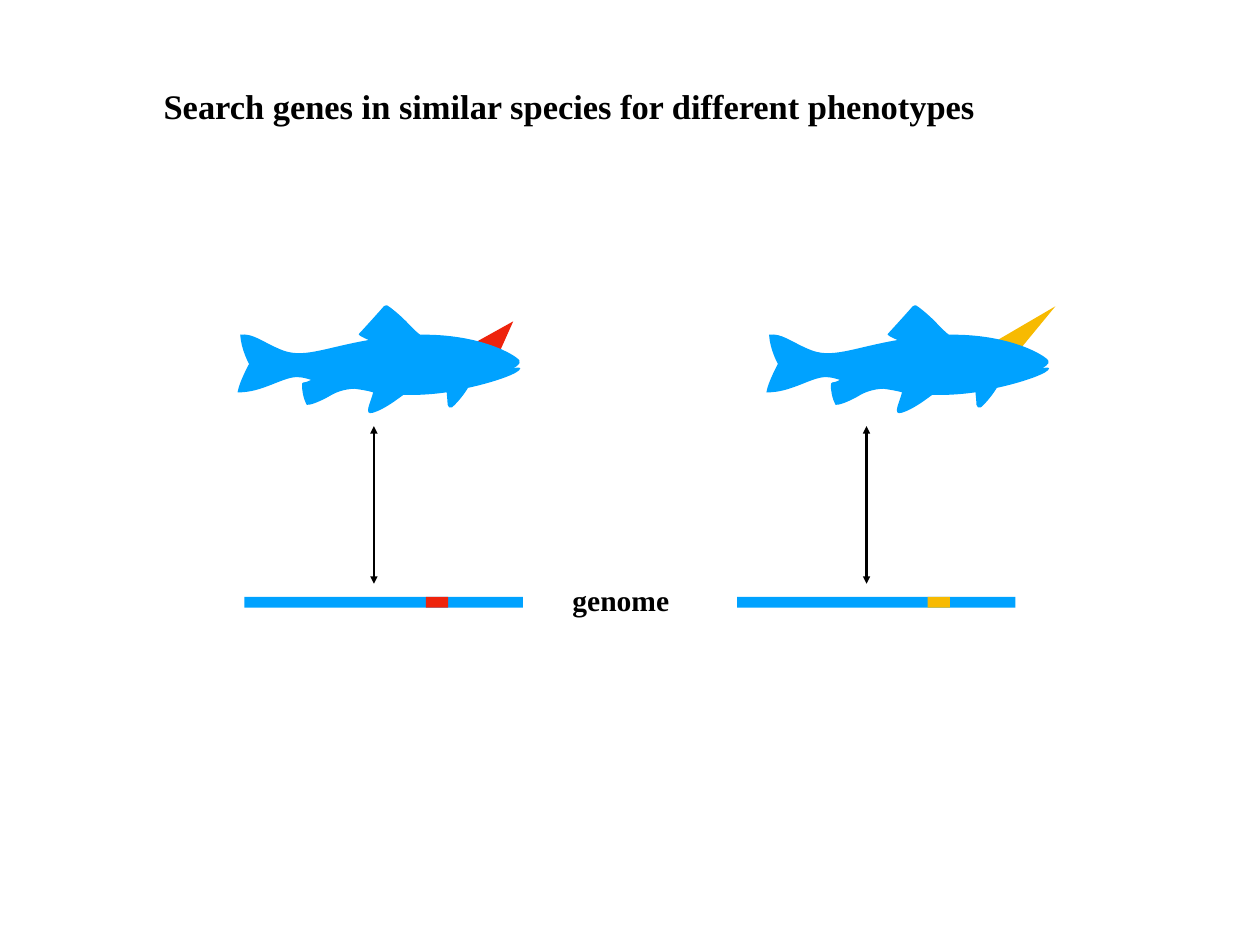
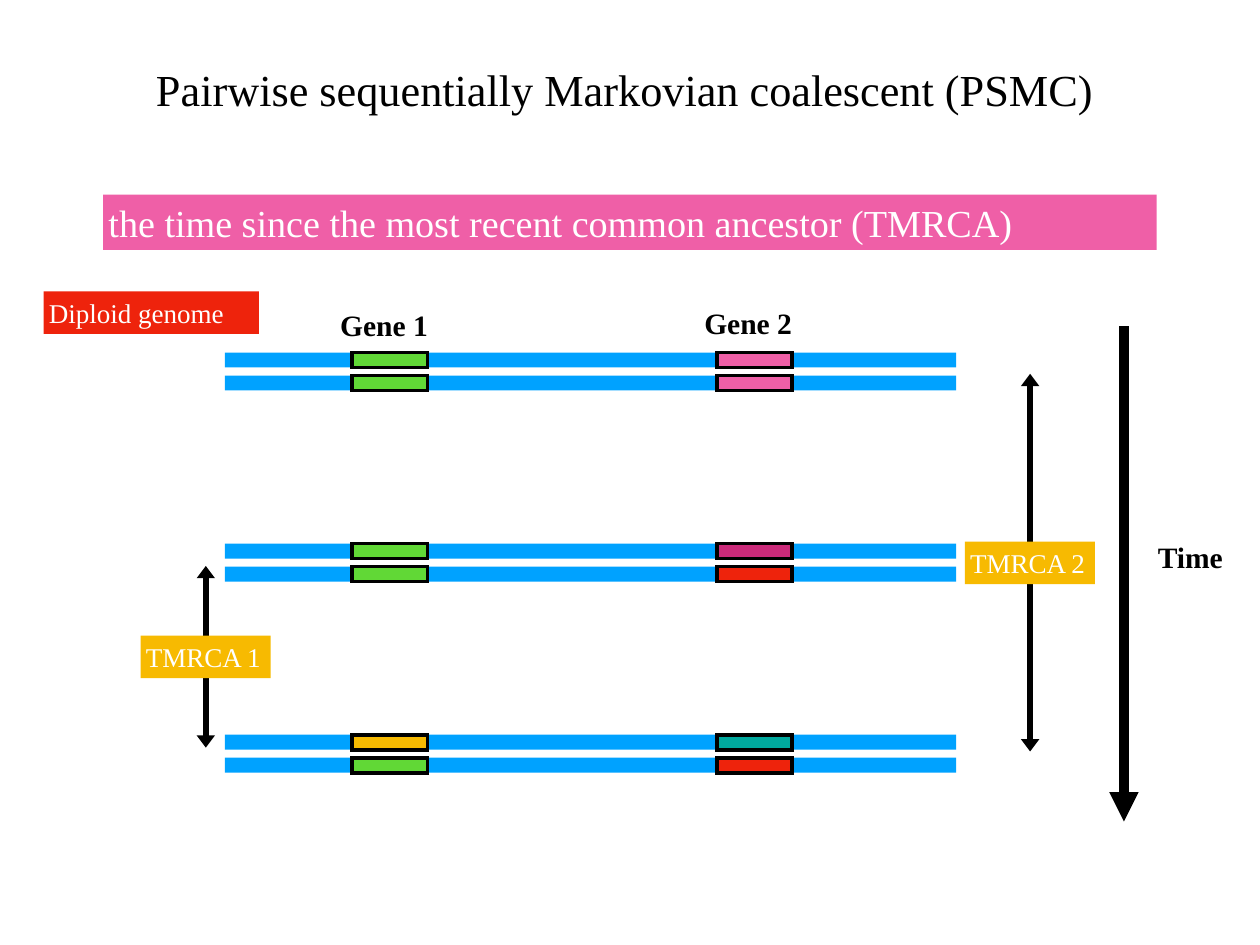
import pptx
import pptx.util
import pptx.dml.color
import pptx.enum.shapes
import pptx.enum.text
import pptx.oxml
import pptx.oxml.ns

Cm = pptx.util.Cm
Pt = pptx.util.Pt
ALIGN = pptx.enum.text.PP_ALIGN
NS = pptx.oxml.ns.nsdecls("a")
FONT = "Times New Roman"
COLORS = {
    "black": "000000", "white": "FFFFFF", "blue": "00A2FF", "red": "EE230C",
    "yellow": "F7BA01", "green": "61D836", "pink": "EF5FA7",
    "magenta": "CB2A7A", "teal": "00A89D",
}

# Fish on a 318 x 122 grid: a start point, then Bézier segments
# (control 1, control 2, end).
FISH_GRID = (318, 122)
FISH_START = (167, 0)
FISH_CURVES = [
    (166, 0, 165, 0, 165, 1), (159, 8, 139, 30, 137, 32),
    (135, 33, 141, 36, 148, 39), (96, 48, 73, 61, 47, 49),
    (28, 41, 17, 31, 3, 33), (4, 50, 13, 66, 13, 66),
    (13, 66, 2, 86, 0, 98), (28, 99, 53, 79, 69, 81),
    (72, 81, 77, 82, 83, 84), (79, 86, 76, 87, 74, 87),
    (73, 87, 73, 88, 73, 88), (72, 96, 75, 106, 77, 110),
    (77, 112, 79, 113, 80, 112), (84, 112, 96, 107, 106, 101),
    (118, 94, 132, 94, 132, 94), (139, 95, 146, 96, 153, 98),
    (151, 108, 141, 125, 153, 121), (166, 117, 180, 106, 187, 101),
    (190, 101, 193, 101, 196, 101), (208, 101, 222, 100, 236, 98),
    (236, 101, 237, 107, 237, 112), (237, 115, 240, 116, 242, 115),
    (250, 108, 257, 98, 260, 93), (292, 86, 319, 76, 319, 71),
    (319, 69, 311, 71, 311, 71), (311, 71, 321, 66, 318, 62),
    (314, 56, 274, 32, 206, 33), (203, 31, 199, 27, 194, 22),
    (187, 14, 174, 3, 169, 0), (169, 0, 168, -1, 167, 0),
]
SHORT_HORN = [(311, 18), (290, 65), (266, 43)]
LONG_HORN = [(326, 1), (261, 39), (275, 63)]


def rgb(name):
    return pptx.dml.color.RGBColor.from_string(COLORS[name])


def paint(shape, fill, outline=None):
    shape.shadow.inherit = False
    shape.fill.solid()
    shape.fill.fore_color.rgb = rgb(fill)
    if outline:
        shape.line.color.rgb = rgb("black")
        shape.line.width = Pt(outline)
        shape.line._get_or_add_ln().append(
            pptx.oxml.parse_xml(f'<a:miter {NS} lim="400000"/>'))
    else:
        shape.line.fill.background()


def write(shape, text, size, color="black", bold=False, align=ALIGN.LEFT):
    tf = shape.text_frame
    tf.text = text
    tf.word_wrap = True
    tf.auto_size = pptx.enum.text.MSO_AUTO_SIZE.NONE
    tf.vertical_anchor = pptx.enum.text.MSO_ANCHOR.MIDDLE
    tf.margin_left = tf.margin_right = Cm(0.15)
    tf.margin_top = tf.margin_bottom = Cm(0.15)
    p = tf.paragraphs[0]
    p.alignment = align
    font = p.runs[0].font
    font.name, font.size, font.bold = FONT, Pt(size), bold
    font.color.rgb = rgb(color)


def add_titled_slide(prs, text, box, size, bold, align):
    s = prs.slides.add_slide(prs.slide_layouts[5])
    title = s.shapes.title
    title.left, title.top, title.width, title.height = map(Cm, box)
    write(title, text, size, bold=bold, align=align)
    return s


def add_bar(s, left, top, width, height, fill, outline=None):
    bar = s.shapes.add_shape(pptx.enum.shapes.MSO_SHAPE.RECTANGLE,
                             Cm(left), Cm(top), Cm(width), Cm(height))
    paint(bar, fill, outline)
    return bar


def add_tag(s, text, left, top, width, height, fill, size=22):
    write(add_bar(s, left, top, width, height, fill), text, size, "white")


def add_label(s, text, left, top, width):
    box = s.shapes.add_textbox(Cm(left), Cm(top), Cm(width), Cm(1.27))
    write(box, text, 24, bold=True)


def add_vertical_arrow(s, x, top, bottom, width, ends=("headEnd", "tailEnd"),
                       head_length="med"):
    line = s.shapes.add_connector(pptx.enum.shapes.MSO_CONNECTOR.STRAIGHT,
                                  Cm(x), Cm(top), Cm(x), Cm(bottom))
    line.line.color.rgb = rgb("black")
    line.line.width = Pt(width)
    ln = line.line._get_or_add_ln()
    for end in ends:
        ln.append(pptx.oxml.parse_xml(
            f'<a:{end} {NS} type="triangle" w="med" len="{head_length}"/>'))
    line._element.spPr.append(pptx.oxml.parse_xml(f'<a:effectLst {NS}/>'))


def add_outline(s, points, color):
    builder = s.shapes.build_freeform(*points[0])
    builder.add_line_segments(points[1:], close=True)
    shape = builder.convert_to_shape()
    paint(shape, color)
    return shape


def bend(shape, curves):
    """Turn each straight segment into the Bézier curve given for it."""
    lines = shape._element.xpath(".//a:lnTo")
    for line, curve in zip(lines, curves):
        pts = "".join(f'<a:pt x="{x - shape.left}" y="{y - shape.top}"/>'
                      for x, y in curve)
        line.getparent().replace(line, pptx.oxml.parse_xml(
            f'<a:cubicBezTo {NS}>{pts}</a:cubicBezTo>'))


def add_fish(s, left, top, width, height, horn, horn_color):
    def place(x, y):
        return (Cm(left + x * width / FISH_GRID[0]),
                Cm(top + y * height / FISH_GRID[1]))

    add_outline(s, [place(*point) for point in horn], horn_color)
    curves = [(place(*c[:2]), place(*c[2:4]), place(*c[4:]))
              for c in FISH_CURVES]
    ends = [place(*FISH_START)] + [curve[2] for curve in curves]
    bend(add_outline(s, ends, "blue"), curves)


def add_species(s, left, top, fish_shift, horn, color, gene_shift):
    """Place a fish above its genome bar, which starts at left."""
    add_fish(s, left + fish_shift, top, 8.08, 3.1, horn, color)
    add_vertical_arrow(s, left + 3.71, top + 3.46, top + 7.98, 2)
    add_bar(s, left, top + 8.36, 7.98, 0.31, "blue")
    add_bar(s, left + gene_shift, top + 8.36, 0.64, 0.31, color)


def add_diploid_genome(s, left, top, strands):
    """Place two strands, each with the colours of its two genes."""
    for i, genes in enumerate(strands):
        y = top + i * 0.66
        add_bar(s, left, y, 20.96, 0.43, "blue")
        for shift, color in zip((3.65, 14.1), genes):
            add_bar(s, left + shift, y, 2.16, 0.43, color, 3)


def add_tmrca(s, text, x, top, bottom, tag_top):
    add_vertical_arrow(s, x, top, bottom, 5, head_length="sm")
    add_tag(s, text, x - 1.87, tag_top, 3.73, 1.22, "yellow")


def build_species_slide(prs):
    s = add_titled_slide(
        prs, "Search genes in similar species for different phenotypes",
        (4.54, 2.31, 27.05, 1.47), 28, True, ALIGN.LEFT)
    add_species(s, 7.01, 8.76, -0.2, SHORT_HORN, "red", 5.2)
    add_species(s, 21.13, 8.76, 0.84, LONG_HORN, "yellow", 5.46)
    add_label(s, "genome", 16.26, 16.55, 3.58)


def build_psmc_slide(prs):
    s = add_titled_slide(
        prs, "Pairwise sequentially Markovian coalescent (PSMC)",
        (2.49, 1.02, 30.84, 3.05), 36, False, ALIGN.CENTER)
    add_tag(s, "the time since the most recent common ancestor (TMRCA)",
            2.96, 5.58, 30.2, 1.59, "pink", 31)
    add_tag(s, "Diploid genome", 1.25, 8.36, 6.17, 1.22, "red")
    add_label(s, "Gene 1", 9.6, 8.68, 3.15)
    add_label(s, "Gene 2", 20.04, 8.61, 3.15)

    generations = [
        [("green", "pink"), ("green", "pink")],
        [("green", "magenta"), ("green", "red")],
        [("yellow", "teal"), ("green", "red")],
    ]
    for i, strands in enumerate(generations):
        add_diploid_genome(s, 6.45, 10.11 + i * 5.48, strands)

    add_tmrca(s, "TMRCA 1", 5.9, 16.23, 21.44, 18.23)
    add_tmrca(s, "TMRCA 2", 29.53, 10.72, 21.55, 15.53)
    add_vertical_arrow(s, 32.22, 9.36, 23.56, 8, ends=("tailEnd",))
    add_label(s, "Time", 33.04, 15.32, 2.31)


def main():
    prs = pptx.Presentation()
    prs.slide_width, prs.slide_height = Cm(36.12), Cm(27.1)
    build_species_slide(prs)
    build_psmc_slide(prs)
    prs.save("out.pptx")


if __name__ == "__main__":
    main()
